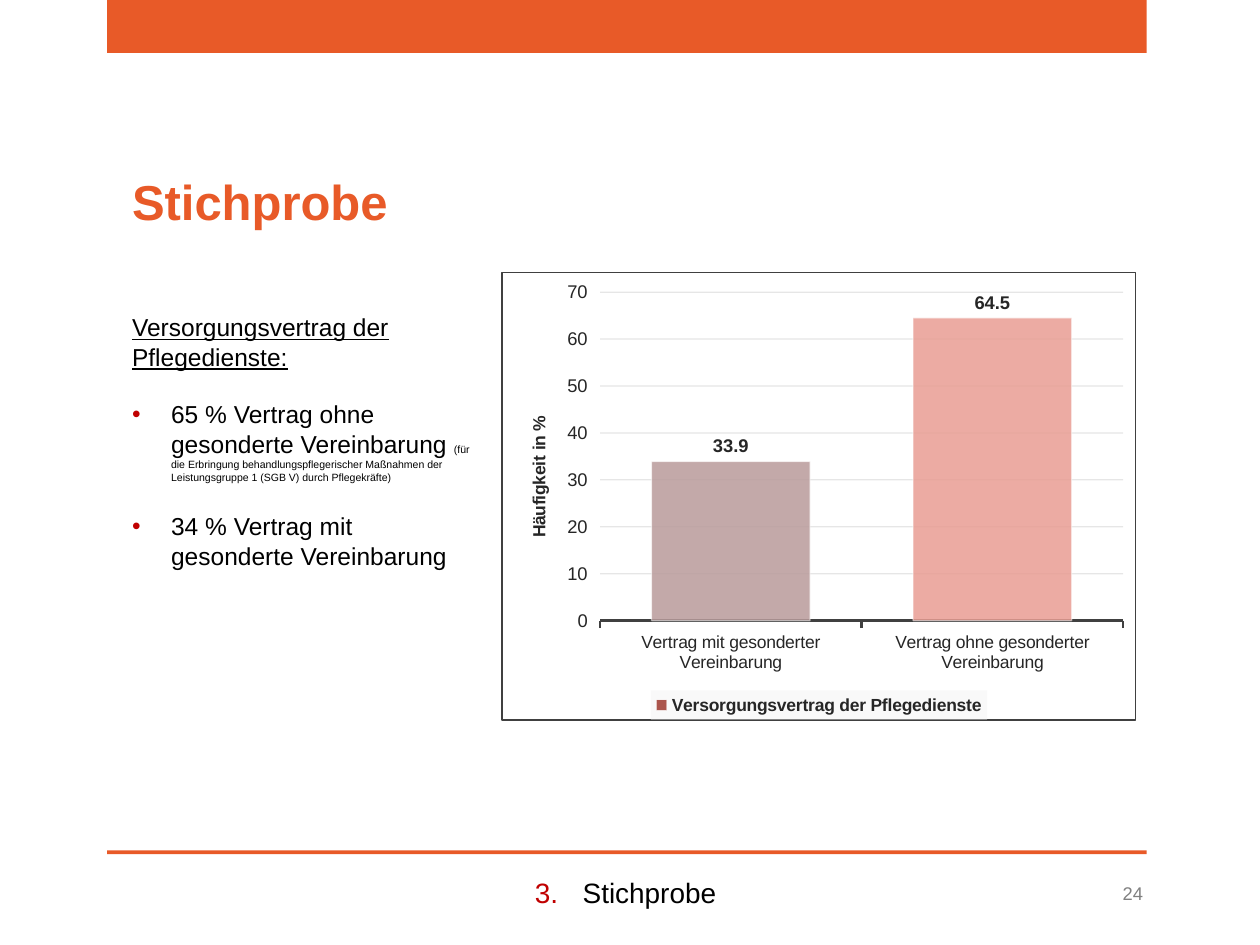
from dataclasses import dataclass

from lxml.etree import SubElement
from pptx import Presentation
from pptx.chart.data import CategoryChartData
from pptx.dml.color import RGBColor
from pptx.enum.chart import XL_CHART_TYPE as ChartType, XL_LABEL_POSITION as LabelPosition
from pptx.enum.chart import XL_LEGEND_POSITION as LegendPosition, XL_TICK_MARK as TickMark
from pptx.enum.shapes import MSO_SHAPE as Preset
from pptx.enum.text import MSO_ANCHOR as Anchor, PP_ALIGN as Align
from pptx.oxml import parse_xml
from pptx.oxml.ns import nsdecls, qn
from pptx.util import Inches, Pt


@dataclass(frozen=True)
class Theme:
    font: str = "Arial"
    orange: str = "E85A28"
    black: str = "000000"
    white: str = "FFFFFF"
    red: str = "C00000"
    gray: str = "808080"
    ink: str = "262626"
    axis: str = "404040"
    grid: str = "0D0D0D"
    legend: str = "F2F2F2"
    series: str = "9E392E"
    bars: tuple = ("B99B9B", "E99D93")
    title: float = 28
    footer: float = 16
    body: float = 14
    label: float = 10.5
    small: float = 10
    note: float = 6


theme = Theme()


def set_font(font, size, color, **options):
    values = {"name": theme.font, "size": Pt(size), **options}
    for name, value in values.items():
        setattr(font, name, value)
    font.color.rgb = RGBColor.from_string(color)


def set_bullet(para, indent, tag, **attributes):
    properties = para._p.get_or_add_pPr()
    properties.set("marL", str(Inches(indent)))
    properties.set("indent", str(-Inches(indent)))
    color = SubElement(properties, qn("a:buClr"))
    SubElement(color, qn("a:srgbClr"), val=theme.red)
    SubElement(properties, qn("a:buFont"), typeface=theme.font)
    SubElement(properties, qn(tag), **attributes)


deck = Presentation()
deck.slide_width, deck.slide_height = Inches(10), Inches(7.5)
page = deck.slides.add_slide(deck.slide_layouts[6])

for top, height in [(0, 0.42), (6.75, 0.03)]:
    bar = page.shapes.add_shape(Preset.RECTANGLE, Inches(0.85), Inches(top), Inches(8.25), Inches(height))
    bar.shadow.inherit = False
    bar.fill.solid()
    bar.fill.fore_color.rgb = RGBColor.from_string(theme.orange)
    bar.line.fill.background()

note = "(für die Erbringung behandlungspflegerischer Maßnahmen der Leistungsgruppe 1 (SGB V) durch Pflegekräfte)"
texts = {
    "footer": ((0.83, 6.9, 8.27, 0.37), [[("Stichprobe", theme.footer, theme.black, {})]]),
    "title": ((0.95, 1.31, 2.23, 0.57), [[("Stichprobe", theme.title, theme.orange, {"bold": True})]]),
    "body": ((0.95, 2.43, 2.94, 2.42), [
        [("Versorgungsvertrag der Pflegedienste:", theme.body, theme.black, {"underline": True})],
        [("65 % Vertrag ohne gesonderte Vereinbarung ", theme.body, theme.black, {}),
         (note, theme.note, theme.black, {})],
        [("34 % Vertrag mit gesonderte Vereinbarung", theme.body, theme.black, {})],
    ]),
    "number": ((8.34, 6.89, 0.83, 0.4), [[("24", theme.label, theme.gray, {})]]),
}
frames = {}
for name, (place, paragraphs) in texts.items():
    box = page.shapes.add_textbox(*map(Inches, place))
    frame = frames[name] = box.text_frame
    frame.word_wrap = True
    for index, spans in enumerate(paragraphs):
        para = frame.add_paragraph() if index else frame.paragraphs[0]
        for text, size, color, options in spans:
            span = para.add_run()
            span.text = text
            set_font(span.font, size, color, **options)

footer = frames["footer"].paragraphs[0]
footer.alignment = Align.CENTER
set_bullet(footer, 0.38, "a:buAutoNum", type="arabicPeriod", startAt="3")
for para in frames["body"].paragraphs[1:]:
    para.space_before = Pt(16)
    set_bullet(para, 0.31, "a:buChar", char="•")
frames["number"].vertical_anchor = Anchor.MIDDLE
frames["number"].paragraphs[0].alignment = Align.RIGHT

data = CategoryChartData()
data.categories = ["Vertrag mit gesonderter Vereinbarung", "Vertrag ohne gesonderter Vereinbarung"]
data.add_series("Versorgungsvertrag der Pflegedienste", (33.9, 64.5))
chart = page.shapes.add_chart(
    ChartType.COLUMN_CLUSTERED, Inches(3.98), Inches(2.16), Inches(5.04), Inches(3.56), data
).chart
set_font(chart.font, theme.small, theme.black)
chart.has_title = False
chart.has_legend = True
chart.legend.position = LegendPosition.BOTTOM
chart.legend.include_in_layout = False
set_font(chart.legend.font, theme.small, theme.ink, bold=True)

categories, values = chart.category_axis, chart.value_axis
set_font(categories.tick_labels.font, theme.small, theme.ink)
set_font(values.tick_labels.font, theme.label, theme.ink)
for axis in (categories, values):
    axis.major_tick_mark = TickMark.OUTSIDE
    axis.minor_tick_mark = TickMark.NONE
values.minimum_scale, values.maximum_scale, values.major_unit = 0, 70, 10
values.format.line.fill.background()
heading = values.axis_title.text_frame.paragraphs[0].add_run()
heading.text = "Häufigkeit in %"
set_font(heading.font, theme.small, theme.ink, bold=True)

plot = chart.plots[0]
plot.gap_width = 65
plot.vary_by_categories = False
series = plot.series[0]
labels = series.data_labels
labels.show_value = True
labels.position = LabelPosition.OUTSIDE_END
set_font(labels.font, theme.label, theme.ink, bold=True)

lines = [(categories.format.line, theme.axis, 1.5), (values.major_gridlines.format.line, theme.grid, 0.75)]
columns = [series, series.points[0], series.points[1]]
for column, color in zip(columns, (theme.series, *theme.bars)):
    column.format.fill.solid()
    column.format.fill.fore_color.rgb = RGBColor.from_string(color)
    lines.append((column.format.line, theme.white, 0.75))
for line, color, width in lines:
    line.color.rgb = RGBColor.from_string(color)
    line.width = Pt(width)

surfaces = [
    ("c:legend/c:txPr", theme.legend, "<a:ln><a:noFill/></a:ln>"),
    ("c:txPr", theme.white,
     f'<a:ln w="{Pt(0.75)}"><a:solidFill><a:srgbClr val="{theme.axis}"/></a:solidFill></a:ln>'),
]
opacity = {theme.grid: 10, theme.white: 50, theme.legend: 39, theme.series: 85, **dict.fromkeys(theme.bars, 85)}
space = chart.element
for target, fill, outline in surfaces:
    parent = space if target == "c:txPr" else space.find(qn("c:chart"))
    anchor = parent.xpath(target)[0]
    anchor.addprevious(parse_xml(
        f'<c:spPr {nsdecls("c", "a")}><a:solidFill><a:srgbClr val="{fill}"/></a:solidFill>{outline}</c:spPr>'
    ))
for color in space.find(qn("c:chart")).iter(qn("a:srgbClr")):
    if color.get("val") in opacity:
        SubElement(color, qn("a:alpha"), val=str(opacity[color.get("val")] * 1000))

deck.save("out.pptx")
